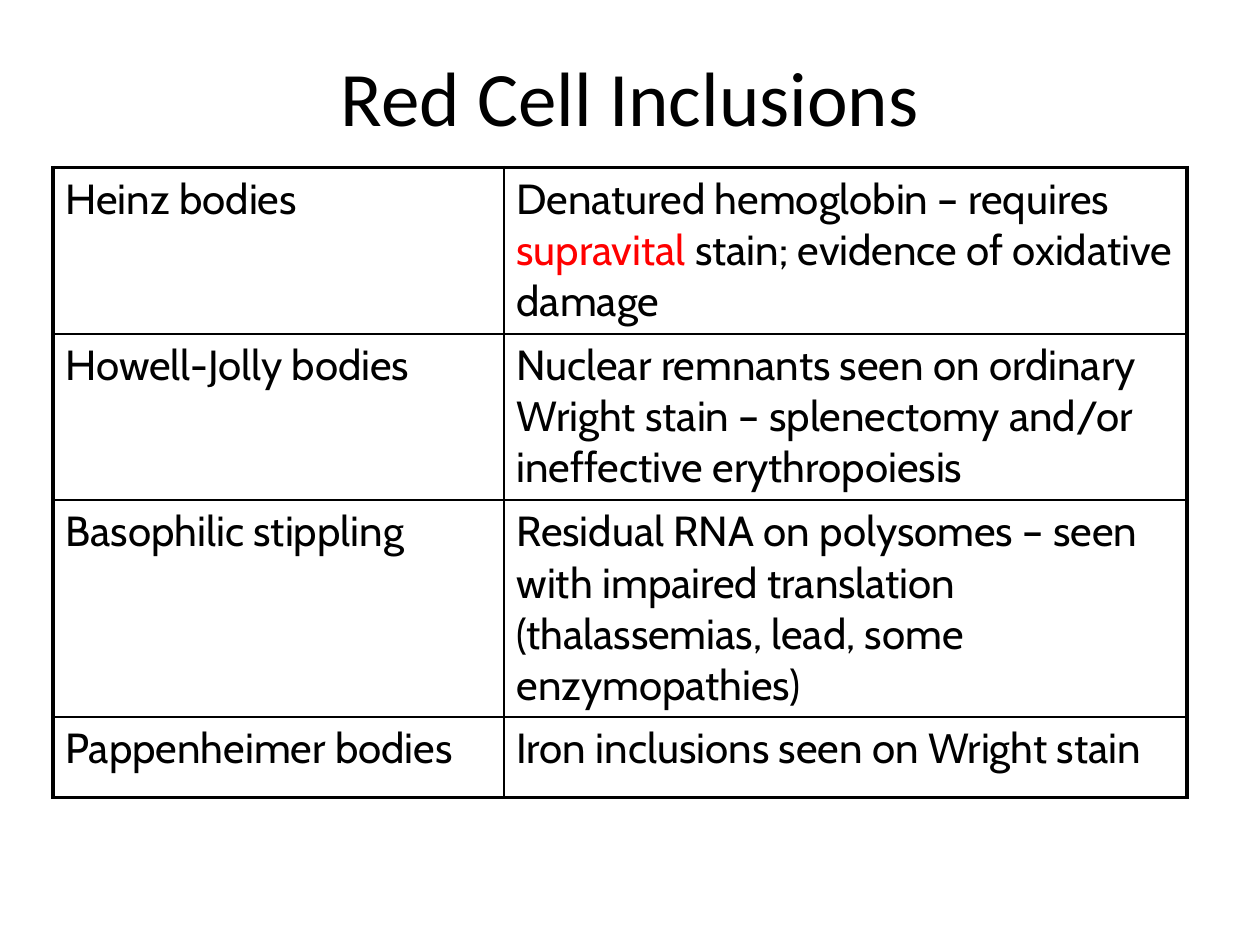
from lxml import etree
from pptx import Presentation
from pptx.dml.color import RGBColor
from pptx.enum.text import MSO_ANCHOR, PP_ALIGN
from pptx.oxml.ns import qn
from pptx.util import Inches, Pt

BLACK = RGBColor(0x00, 0x00, 0x00)
RED = RGBColor(0xFF, 0x00, 0x00)
THICK, THIN = Pt(2.25), Pt(1)

COLS = [3.58, 5.42]
HEIGHTS = [1.32, 1.32, 1.72, 0.64]
ROWS = [
    ("Heinz bodies",
     [("Denatured hemoglobin – requires ", BLACK), ("supravital", RED),
      (" stain; evidence of oxidative damage", BLACK)]),
    ("Howell-Jolly bodies",
     "Nuclear remnants seen on ordinary Wright stain – splenectomy and/or "
     "ineffective erythropoiesis"),
    ("Basophilic stippling",
     "Residual RNA on polysomes – seen with impaired translation "
     "(thalassemias, lead, some enzymopathies)"),
    ("Pappenheimer bodies", "Iron inclusions seen on Wright stain"),
]


def write(frame, text, font="Cabin", size=24, color=BLACK, align=PP_ALIGN.LEFT):
    """Fill a frame with one paragraph; text is a string or (text, color) runs."""
    para = frame.paragraphs[0]
    para.alignment = align
    for part, tint in [(text, color)] if isinstance(text, str) else text:
        run = para.add_run()
        run.text = part
        run.font.name = font
        run.font.size = Pt(size)
        run.font.color.rgb = tint


def set_edges(cell, **widths):
    """Draw the cell's L, R, T and B borders, which must precede its fill."""
    props = cell._tc.get_or_add_tcPr()
    for place, side in enumerate("LRTB"):
        line = etree.Element(qn(f"a:ln{side}"), w=str(widths[side]))
        fill = etree.SubElement(line, qn("a:solidFill"))
        etree.SubElement(fill, qn("a:srgbClr"), val=str(BLACK))
        props.insert(place, line)


def add_title(slide, left, top, width, height):
    title = slide.shapes.title
    title.left, title.top = Inches(left), Inches(top)
    title.width, title.height = Inches(width), Inches(height)
    frame = title.text_frame
    frame.word_wrap = True
    frame.vertical_anchor = MSO_ANCHOR.TOP
    frame.margin_top = Inches(0.09)
    write(frame, "Red Cell Inclusions", font="Calibri", size=44,
          align=PP_ALIGN.CENTER)


def add_grid(slide, left, top, width, height):
    table = slide.shapes.add_table(
        len(ROWS), len(COLS), Inches(left), Inches(top),
        Inches(width), Inches(height)).table
    table.first_row = table.horz_banding = False
    for col, size in zip(table.columns, COLS):
        col.width = Inches(size)
    for row, size in zip(table.rows, HEIGHTS):
        row.height = Inches(size)
    end_row, end_col = len(ROWS) - 1, len(COLS) - 1
    for r, texts in enumerate(ROWS):
        for c, text in enumerate(texts):
            cell = table.cell(r, c)
            cell.fill.background()
            set_edges(cell,
                      L=THICK if c == 0 else THIN,
                      R=THICK if c == end_col else THIN,
                      T=THICK if r == 0 else THIN,
                      B=THICK if r == end_row else THIN)
            write(cell.text_frame, text)


def main():
    deck = Presentation()
    deck.slide_width, deck.slide_height = Inches(10), Inches(7.5)
    slide = deck.slides.add_slide(deck.slide_layouts[5])
    add_title(slide, 0.5, 0.3, 9, 1.25)
    add_grid(slide, 0.42, 1.33, sum(COLS), sum(HEIGHTS))
    deck.save("out.pptx")


if __name__ == "__main__":
    main()
